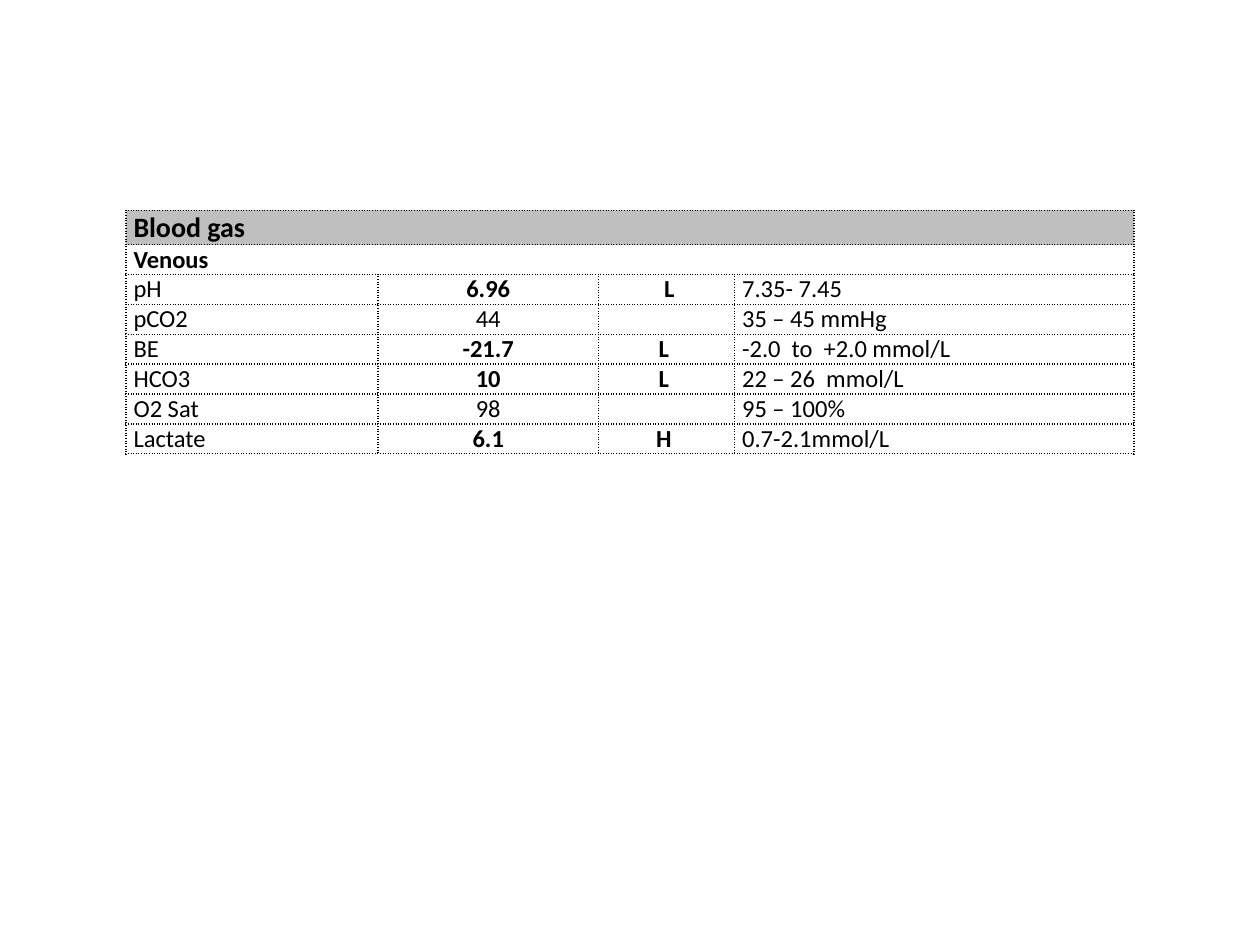
from dataclasses import dataclass

from lxml import etree
from pptx import Presentation
from pptx import util as u
from pptx.dml.color import RGBColor
from pptx.enum import text
from pptx.oxml import ns


@dataclass(frozen=True)
class Theme:
    font: str = "Calibri"
    ink: str = "000000"
    heading_fill: str = "BFBFBF"
    heading_size: int = 16
    body_size: int = 14
    border_width: int = 1


theme = Theme()


def dot_borders(cell):
    """Draw a dotted line on all four sides of a cell."""
    properties = cell._tc.get_or_add_tcPr()
    for position, side in enumerate(("lnL", "lnR", "lnT", "lnB")):
        line = etree.Element(ns.qn(f"a:{side}"), w=str(u.Pt(theme.border_width)))
        fill = etree.SubElement(line, ns.qn("a:solidFill"))
        etree.SubElement(fill, ns.qn("a:srgbClr"), val=theme.ink)
        etree.SubElement(line, ns.qn("a:prstDash"), val="sysDot")
        properties.insert(position, line)


# Results: test, value, flag, reference range
results = [
    ("pH", "6.96", " L", "7.35- 7.45"),
    ("pCO2", "44", "", "35 – 45 mmHg"),
    ("BE", "-21.7", "L ", "-2.0  to  +2.0 mmol/L"),
    ("HCO3", "10", "L ", "22 – 26  mmol/L"),
    ("O2 Sat", "98", "", "95 – 100%"),
    ("Lactate", "6.1", "H ", "0.7-2.1mmol/L"),
]
headings = [("Blood gas", "", "", ""), ("Venous", "", "", "")]
rows = headings + results

# Slide
deck = Presentation()
deck.slide_width, deck.slide_height = u.Inches(10), u.Inches(7.5)
slide = deck.slides.add_slide(deck.slide_layouts[6])

# Table grid
column_widths = [2, 1.75, 1.08, 3.17]
row_heights = [0.27] + [0.23] * (len(rows) - 1)
blood_gas = slide.shapes.add_table(
    len(rows), len(column_widths), int(deck.slide_width * 0.1), u.Inches(1.67),
    u.Inches(sum(column_widths)), u.Inches(sum(row_heights))).table
blood_gas.first_row = blood_gas.horz_banding = False
for column, width in zip(blood_gas.columns, column_widths):
    column.width = u.Inches(width)
for row, height in zip(blood_gas.rows, row_heights):
    row.height = u.Inches(height)

# Cells: abnormal results carry a flag and are bold
for r, values in enumerate(rows):
    is_heading = r < len(headings)
    size = theme.heading_size if r == 0 else theme.body_size
    for c, value in enumerate(values):
        cell = blood_gas.cell(r, c)
        cell.margin_left = cell.margin_right = u.Inches(0.06)
        cell.margin_top = cell.margin_bottom = 0
        if r == 0:
            cell.fill.solid()
            cell.fill.fore_color.rgb = RGBColor.from_string(theme.heading_fill)
        else:
            cell.fill.background()
        dot_borders(cell)

        entry = cell.text_frame.paragraphs[0]
        if value:
            entry.text = value
        else:
            # An empty cell takes its line height from the end mark
            etree.SubElement(entry._p, ns.qn("a:endParaRPr"), sz=str(size * 100))
        entry.font.name = theme.font
        entry.font.size = u.Pt(size)
        entry.font.color.rgb = RGBColor.from_string(theme.ink)
        entry.font.bold = is_heading or (c in (1, 2) and bool(values[2]))
        if c in (1, 2):
            entry.alignment = text.PP_ALIGN.CENTER

    if is_heading:
        blood_gas.cell(r, 0).merge(blood_gas.cell(r, len(column_widths) - 1))

deck.save("out.pptx")
